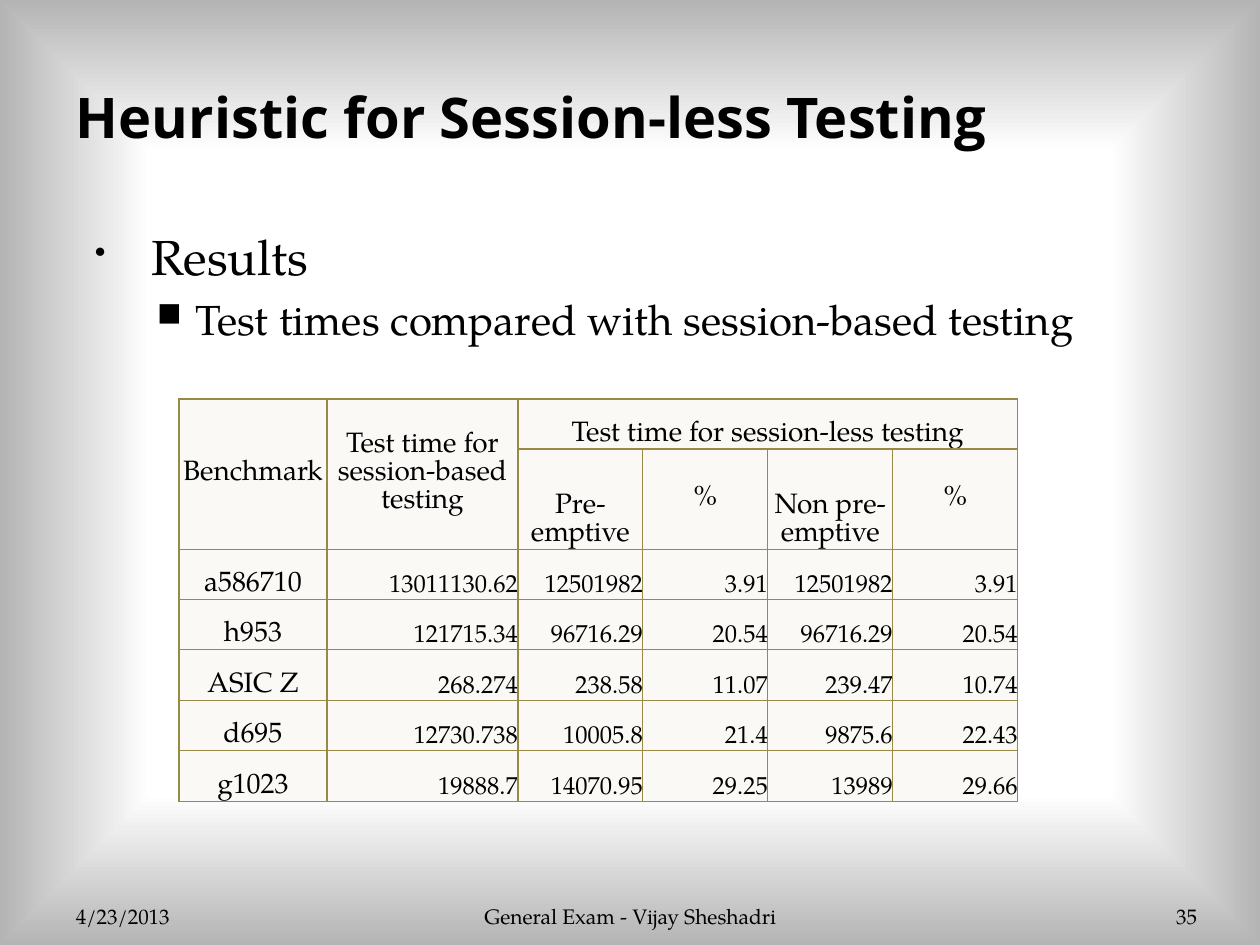
from lxml.etree import SubElement
from pptx import Presentation
from pptx.dml.color import RGBColor
from pptx.enum.text import MSO_ANCHOR as Anchor, PP_ALIGN as Align
from pptx.oxml import parse_xml
from pptx.oxml.ns import nsdecls, qn
from pptx.util import Pt

PX = 914400 / 126
BLACK = RGBColor(0x00, 0x00, 0x00)
WHITE = RGBColor(0xFF, 0xFF, 0xFF)
EDGE_GREY = RGBColor(0xB4, 0xB4, 0xB4)
CELL_FILL = RGBColor(0xFA, 0xF9, 0xF6)
BORDER = RGBColor(0x99, 0x89, 0x46)
HEAD_FONT = "Open Sans"
BODY_FONT = "TeX Gyre Pagella"


def px(length):
    return round(length * PX)


class SlideBuilder:
    def __init__(self, deck):
        self.page = deck.slides.add_slide(deck.slide_layouts[6])

    def style(self, para, size, align=Align.LEFT, font=BODY_FONT, bold=False):
        para.alignment = align
        for span in para.runs:
            span.font.name = font
            span.font.size = Pt(size)
            span.font.bold = bold
            span.font.color.rgb = BLACK

    def background(self):
        fill = self.page.background.fill
        fill.gradient()
        for stop, position, color in zip(
            fill.gradient_stops, (0.68, 1), (WHITE, EDGE_GREY)
        ):
            stop.position = position
            stop.color.rgb = color
        # The gradient runs from the centre out to the edges
        grad = self.page.background.fill._fill._gradFill
        grad.remove(grad.find(qn("a:lin")))
        grad.append(parse_xml(
            f'<a:path {nsdecls("a")} path="shape">'
            '<a:fillToRect l="50000" t="50000" r="50000" b="50000"/></a:path>'
        ))

    def text(self, text, left, top, width, height, size,
             anchor=Anchor.BOTTOM, side_inset=13, **look):
        box = self.page.shapes.add_textbox(px(left), px(top), px(width), px(height))
        frame = box.text_frame
        frame.word_wrap = True
        frame.vertical_anchor = anchor
        frame.margin_left = frame.margin_right = px(side_inset)
        frame.text = text
        for para in frame.paragraphs:
            self.style(para, size, **look)
        return frame

    def bullet(self, para, size, char, percent, indent, hanging, level):
        para.level = level
        para.space_before = Pt(size * 0.2)
        self.style(para, size)
        props = para._p.get_or_add_pPr()
        props.set("marL", str(px(indent)))
        props.set("indent", str(-px(hanging)))
        color = SubElement(props, qn("a:buClr"))
        SubElement(color, qn("a:srgbClr"), val=str(BLACK))
        SubElement(props, qn("a:buSzPct"), val=str(percent * 1000))
        SubElement(props, qn("a:buChar"), char=char)

    def cell(self, cell, text, size, align, anchor):
        cell.margin_left = cell.margin_right = 0
        cell.margin_top = cell.margin_bottom = 0
        cell.vertical_anchor = anchor
        cell.text = text
        self.style(cell.text_frame.paragraphs[0], size, align)
        cell.fill.solid()
        cell.fill.fore_color.rgb = CELL_FILL
        for index, side in enumerate(("lnL", "lnR", "lnT", "lnB")):
            cell._tc.get_or_add_tcPr().insert(index, parse_xml(
                f'<a:{side} {nsdecls("a")} w="{Pt(0.75)}"><a:solidFill>'
                f'<a:srgbClr val="{BORDER}"/></a:solidFill></a:{side}>'
            ))

    def table(self, rows, left, top, widths, heights, merges, middle):
        frame = self.page.shapes.add_table(
            len(rows), len(widths), px(left), px(top), px(sum(widths)), px(sum(heights))
        )
        table = frame.table
        table.first_row = table.horz_banding = False
        for column, width in zip(table.columns, widths):
            column.width = px(width)
        for row, height in zip(table.rows, heights):
            row.height = px(height)
        for r, values in enumerate(rows):
            for c, value in enumerate(values):
                number = r > 1 and c > 0
                self.cell(
                    table.cell(r, c), value,
                    14 if number else 16,
                    Align.RIGHT if number else Align.CENTER,
                    Anchor.MIDDLE if (r, c) in middle else Anchor.BOTTOM,
                )
        for first, last in merges:
            table.cell(*first).merge(table.cell(*last))


def main():
    deck = Presentation()
    deck.slide_width, deck.slide_height = px(1260), px(945)
    slide = SlideBuilder(deck)
    slide.background()

    # Title and bullets
    slide.text("Heuristic for Session-less Testing", 63, 38, 1134, 157, 32,
               Anchor.MIDDLE, font=HEAD_FONT, bold=True)
    body = slide.text("Results\nTest times compared with session-based testing",
                      63, 220, 1134, 649, 28, Anchor.TOP)
    results, comparison = body.paragraphs
    slide.bullet(results, 28, "•", 65, indent=76, hanging=57, level=0)
    slide.bullet(comparison, 24, "■", 80, indent=120, hanging=39, level=1)

    # Footer
    slide.text("4/23/2013", 63, 885, 294, 50, 12)
    slide.text("General Exam - Vijay Sheshadri", 431, 885, 399, 50, 12,
               align=Align.CENTER)
    slide.text("35", 1092, 885, 105, 50, 12, side_inset=0, align=Align.RIGHT)

    # Test time table
    rows = [
        ("Benchmark", "Test time for session-based testing",
         "Test time for session-less testing", "", "", ""),
        ("", "", "Pre-emptive", "%", "Non pre-emptive", "%"),
        ("a586710", "13011130.62", "12501982", "3.91", "12501982", "3.91"),
        ("h953", "121715.34", "96716.29", "20.54", "96716.29", "20.54"),
        ("ASIC Z", "268.274", "238.58", "11.07", "239.47", "10.74"),
        ("d695", "12730.738", "10005.8", "21.4", "9875.6", "22.43"),
        ("g1023", "19888.7", "14070.95", "29.25", "13989", "29.66"),
    ]
    slide.table(
        rows, 179, 399,
        widths=[148, 191] + [125] * 4,
        heights=[50, 95, 50, 50, 51, 50, 51],
        merges=[((0, 0), (1, 0)), ((0, 1), (1, 1)), ((0, 2), (0, 5))],
        middle={(0, 0), (0, 1), (1, 3), (1, 5)},
    )

    deck.save("out.pptx")


if __name__ == "__main__":
    main()
